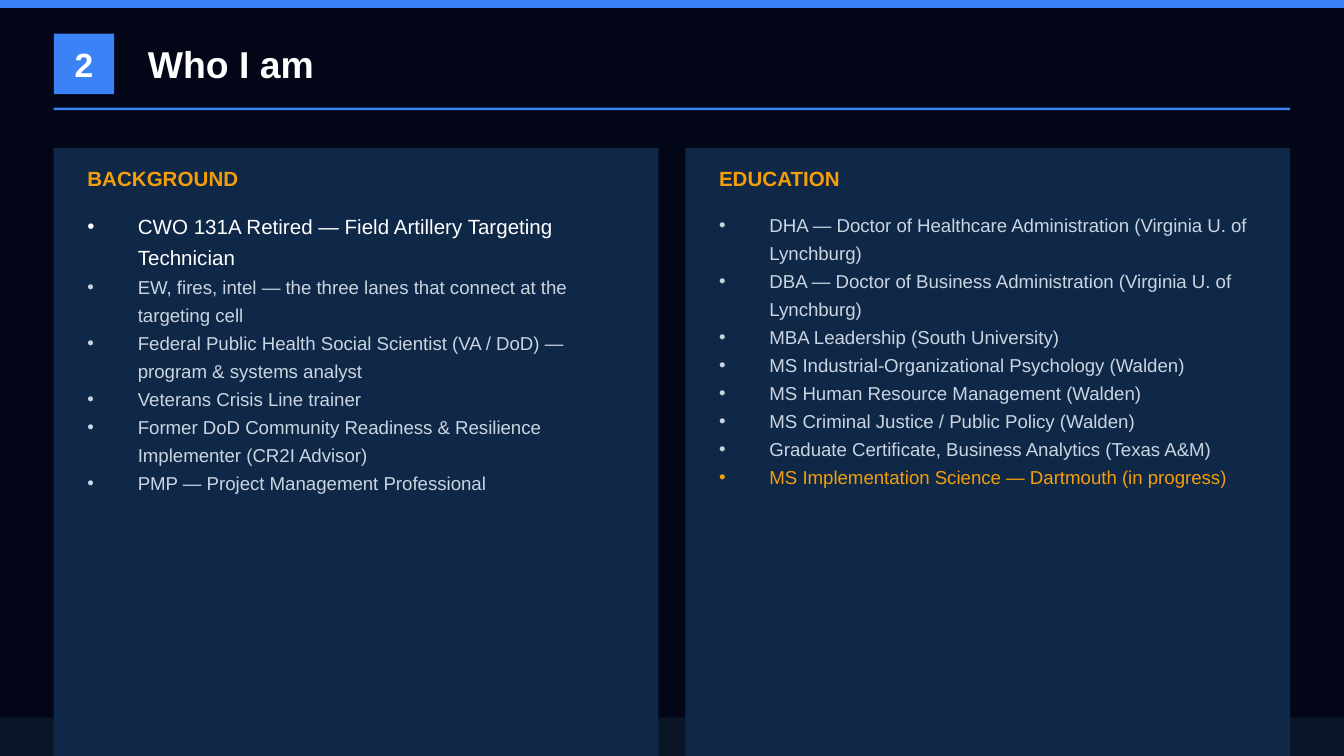
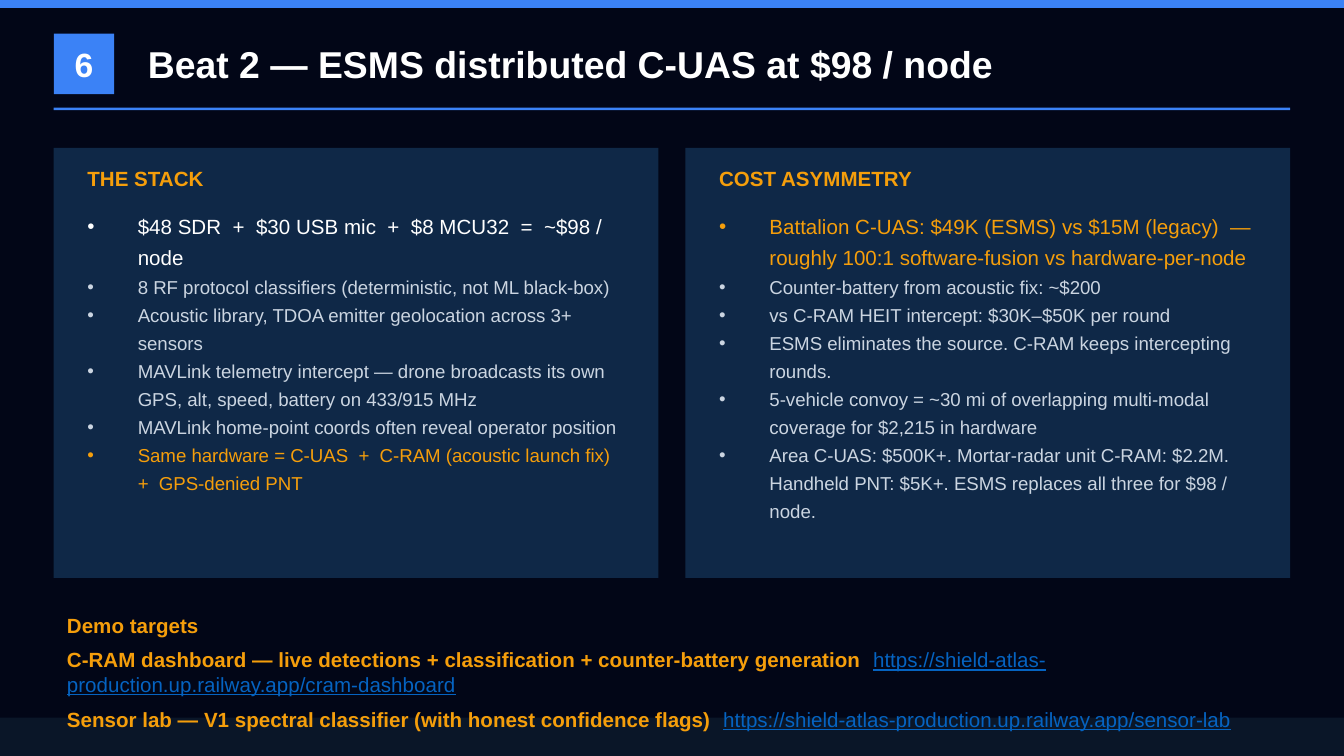
from lxml import etree
from pptx import Presentation
from pptx.dml.color import RGBColor
from pptx.enum.shapes import MSO_SHAPE
from pptx.enum.text import MSO_ANCHOR, MSO_AUTO_SIZE, PP_ALIGN
from pptx.oxml.ns import qn
from pptx.util import Pt

RECTANGLE = MSO_SHAPE.RECTANGLE
LEFT, CENTER = PP_ALIGN.LEFT, PP_ALIGN.CENTER
TOP, MIDDLE = MSO_ANCHOR.TOP, MSO_ANCHOR.MIDDLE
NO_AUTOFIT = MSO_AUTO_SIZE.NONE

PX = 4572  # 200 px to the inch
SLIDE_WIDTH, SLIDE_HEIGHT = 2000, 1125
COMPARISON_LAYOUT = 4
FONT = "Arial"

NIGHT, FOOTER, NAVY = "020617", "0A1628", "0F2847"
BLUE, AMBER, WHITE, MIST, LINK = "3B82F6", "F59E0B", "FFFFFF", "CBD5E1", "0563C1"

TITLE = {"size": 20, "bold": True, "color": WHITE}
BADGE = {"size": 18, "bold": True, "color": WHITE}
HEADING = {"size": 11, "bold": True, "color": AMBER}
URL = {"size": 11, "bold": False, "color": LINK, "underline": True}
ITEM = {"size": 10, "bold": False, "color": MIST}
LEAD = {**ITEM, "size": 11, "color": WHITE}
ACCENT = {**ITEM, "color": AMBER}
ACCENT_LEAD = {**LEAD, "color": AMBER}

MARGIN = 80
CONTENT_WIDTH = SLIDE_WIDTH - 2 * MARGIN
CARD_TOP, CARD_WIDTH, CARD_GAP, CARD_PADDING = 220, 900, 40, 30
HEADING_TOP, LIST_TOP, LIST_BOTTOM_GAP = 236, 300, 20
BULLET_INDENT = 75
DEMO_TOP, DEMO_STEP, LINE_HEIGHT = 900, 70, 60

SLIDES = [
    {
        "number": "2",
        "title": "Who I am",
        "card_height": 920,
        "cards": [
            ("BACKGROUND", [
                ("CWO 131A Retired — Field Artillery Targeting Technician", LEAD),
                ("EW, fires, intel — the three lanes that connect at the targeting cell", ITEM),
                ("Federal Public Health Social Scientist (VA / DoD) — program & systems analyst", ITEM),
                ("Veterans Crisis Line trainer", ITEM),
                ("Former DoD Community Readiness & Resilience Implementer (CR2I Advisor)", ITEM),
                ("PMP — Project Management Professional", ITEM),
            ]),
            ("EDUCATION", [
                ("DHA — Doctor of Healthcare Administration (Virginia U. of Lynchburg)", ITEM),
                ("DBA — Doctor of Business Administration (Virginia U. of Lynchburg)", ITEM),
                ("MBA Leadership (South University)", ITEM),
                ("MS Industrial-Organizational Psychology (Walden)", ITEM),
                ("MS Human Resource Management (Walden)", ITEM),
                ("MS Criminal Justice / Public Policy (Walden)", ITEM),
                ("Graduate Certificate, Business Analytics (Texas A&M)", ITEM),
                ("MS Implementation Science — Dartmouth (in progress)", ACCENT),
            ]),
        ],
        "demo_lines": [],
    },
    {
        "number": "6",
        "title": "Beat 2 — ESMS distributed C-UAS at $98 / node",
        "card_height": 640,
        "cards": [
            ("THE STACK", [
                ("$48 SDR  +  $30 USB mic  +  $8 MCU32  =  ~$98 / node", LEAD),
                ("8 RF protocol classifiers (deterministic, not ML black-box)", ITEM),
                ("Acoustic library, TDOA emitter geolocation across 3+ sensors", ITEM),
                ("MAVLink telemetry intercept — drone broadcasts its own "
                 "GPS, alt, speed, battery on 433/915 MHz", ITEM),
                ("MAVLink home-point coords often reveal operator position", ITEM),
                ("Same hardware = C-UAS  +  C-RAM (acoustic launch fix)  +  GPS-denied PNT", ACCENT),
            ]),
            ("COST ASYMMETRY", [
                ("Battalion C-UAS: $49K (ESMS) vs $15M (legacy)  — "
                 "roughly 100:1 software-fusion vs hardware-per-node", ACCENT_LEAD),
                ("Counter-battery from acoustic fix: ~$200", ITEM),
                ("vs C-RAM HEIT intercept: $30K–$50K per round", ITEM),
                ("ESMS eliminates the source. C-RAM keeps intercepting rounds.", ITEM),
                ("5-vehicle convoy = ~30 mi of overlapping multi-modal "
                 "coverage for $2,215 in hardware", ITEM),
                ("Area C-UAS: $500K+. Mortar-radar unit C-RAM: $2.2M. Handheld PNT: $5K+. "
                 "ESMS replaces all three for $98 / node.", ITEM),
            ]),
        ],
        "demo_lines": [
            [("Demo targets", HEADING)],
            [("C-RAM dashboard — live detections + classification + counter-battery generation  ", HEADING),
             ("https://shield-atlas-production.up.railway.app/cram-dashboard", URL)],
            [("Sensor lab — V1 spectral classifier (with honest confidence flags)  ", HEADING),
             ("https://shield-atlas-production.up.railway.app/sensor-lab", URL)],
        ],
    },
]


def scale(*lengths):
    return [length * PX for length in lengths]


def set_fill(fill, color):
    fill.solid()
    fill.fore_color.rgb = RGBColor.from_string(color)


def add_rectangle(slide, box, color):
    shape = slide.shapes.add_shape(RECTANGLE, *scale(*box))
    shape.shadow.inherit = False
    set_fill(shape.fill, color)
    shape.line.fill.background()
    return shape


def write_runs(paragraph, runs, alignment=LEFT):
    paragraph.alignment = alignment
    paragraph.space_before = Pt(0)
    for text, style in runs:
        run = paragraph.add_run()
        run.text = text
        run.font.name = FONT
        for name, value in style.items():
            if name == "color":
                run.font.color.rgb = RGBColor.from_string(value)
            else:
                setattr(run.font, name, Pt(value) if name == "size" else value)


def prepare_frame(shape, anchor=MIDDLE):
    frame = shape.text_frame
    settings = {"word_wrap": True, "auto_size": NO_AUTOFIT, "vertical_anchor": anchor}
    for name, value in settings.items():
        setattr(frame, name, value)
    return frame


def place(placeholder, box):
    """Move a placeholder into its box and in front of the shapes drawn so far."""
    for name, value in zip(("left", "top", "width", "height"), scale(*box)):
        setattr(placeholder, name, value)
    placeholder.element.getparent().append(placeholder.element)


def add_bullet(paragraph):
    properties = paragraph._p.get_or_add_pPr()
    properties.set("marL", str(BULLET_INDENT * PX))
    properties.set("indent", str(-BULLET_INDENT * PX))
    etree.SubElement(properties, qn("a:buChar")).set("char", "•")


def fill_list(placeholder, items):
    frame = prepare_frame(placeholder, TOP)
    for index, item in enumerate(items):
        paragraph = frame.add_paragraph() if index else frame.paragraphs[0]
        add_bullet(paragraph)
        paragraph.line_spacing = 1.25
        write_runs(paragraph, [item])


def add_header(slide, number, title):
    add_rectangle(slide, (0, 0, SLIDE_WIDTH, 12), BLUE)
    add_rectangle(slide, (0, 1068, SLIDE_WIDTH, 57), FOOTER)
    badge = add_rectangle(slide, (MARGIN, 50, 90, 90), BLUE)
    frame = prepare_frame(badge)
    frame.margin_left = frame.margin_right = 0
    write_runs(frame.paragraphs[0], [(number, BADGE)], CENTER)
    place(slide.shapes.title, (200, 40, 1700, 110))
    write_runs(prepare_frame(slide.shapes.title).paragraphs[0], [(title, TITLE)])
    add_rectangle(slide, (MARGIN, 160, CONTENT_WIDTH, 4), BLUE)


def add_card(slide, column, height, heading, items):
    left = MARGIN + column * (CARD_WIDTH + CARD_GAP)
    add_rectangle(slide, (left, CARD_TOP, CARD_WIDTH, height), NAVY)
    text_left, text_width = left + CARD_PADDING, CARD_WIDTH - 2 * CARD_PADDING
    list_height = CARD_TOP + height - LIST_BOTTOM_GAP - LIST_TOP
    # The comparison layout numbers its heading and list pairs 1, 2 and 3, 4.
    placeholders = {p.placeholder_format.idx: p for p in slide.placeholders}
    heading_box, list_box = placeholders[2 * column + 1], placeholders[2 * column + 2]
    place(heading_box, (text_left, HEADING_TOP, text_width, LINE_HEIGHT))
    write_runs(prepare_frame(heading_box).paragraphs[0], [(heading, HEADING)])
    place(list_box, (text_left, LIST_TOP, text_width, list_height))
    fill_list(list_box, items)


def add_demo_lines(slide, lines):
    for row, runs in enumerate(lines):
        box = (MARGIN, DEMO_TOP + row * DEMO_STEP, CONTENT_WIDTH, LINE_HEIGHT)
        text_box = slide.shapes.add_textbox(*scale(*box))
        write_runs(prepare_frame(text_box).paragraphs[0], runs)


def main():
    presentation = Presentation()
    presentation.slide_width, presentation.slide_height = scale(SLIDE_WIDTH, SLIDE_HEIGHT)
    set_fill(presentation.slide_master.background.fill, NIGHT)
    for content in SLIDES:
        slide = presentation.slides.add_slide(presentation.slide_layouts[COMPARISON_LAYOUT])
        add_header(slide, content["number"], content["title"])
        for column, (heading, items) in enumerate(content["cards"]):
            add_card(slide, column, content["card_height"], heading, items)
        add_demo_lines(slide, content["demo_lines"])
    presentation.save("out.pptx")


if __name__ == "__main__":
    main()
